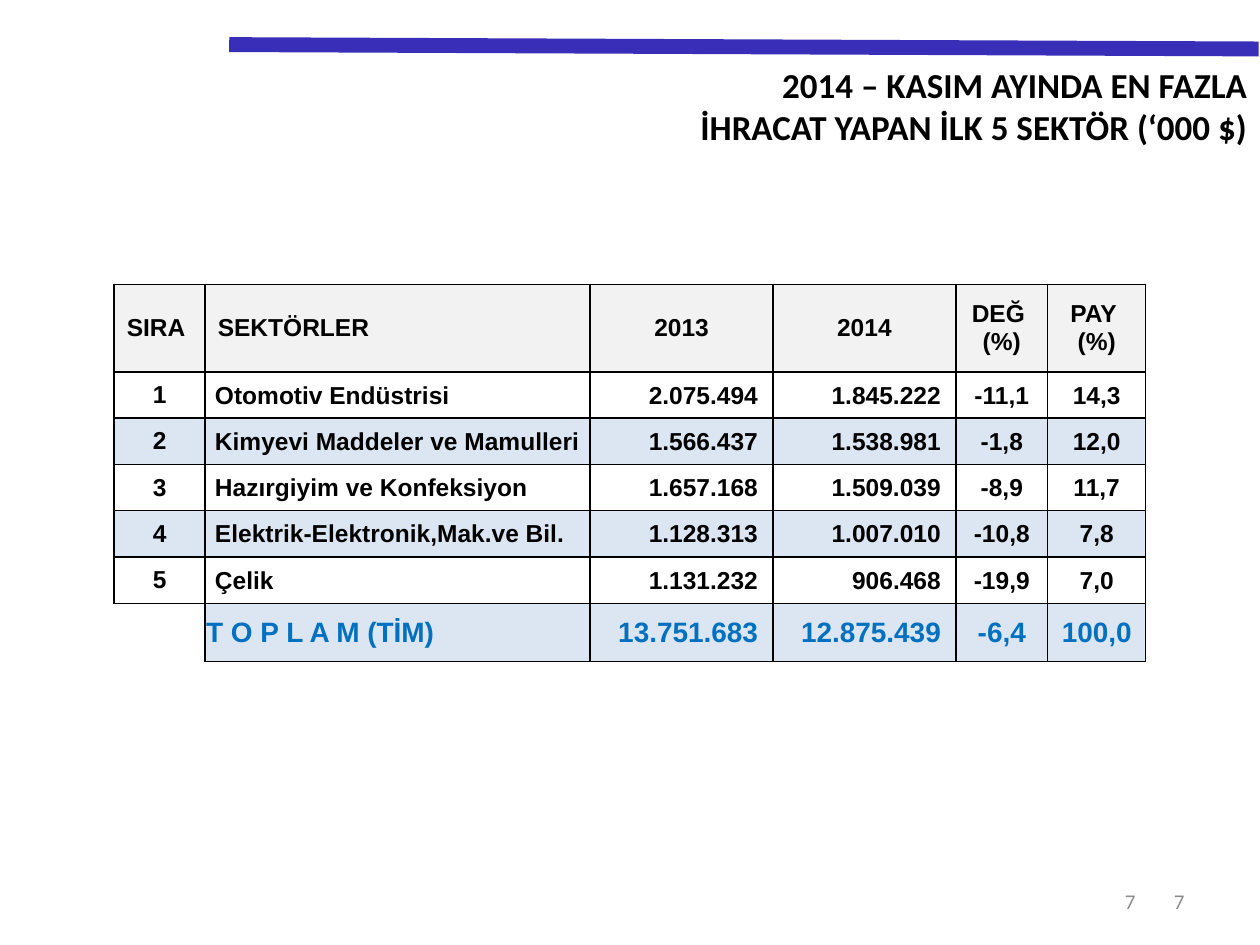
from pptx import Presentation
from pptx.dml.color import RGBColor
from pptx.enum.shapes import MSO_CONNECTOR
from pptx.enum.text import MSO_ANCHOR, MSO_AUTO_SIZE, PP_ALIGN
from pptx.oxml.ns import qn
from pptx.util import Pt
from lxml import etree

BLACK = RGBColor(0x00, 0x00, 0x00)
INDIGO = RGBColor(0x38, 0x2E, 0xB8)
GRAY = RGBColor(0x8C, 0x8C, 0x8C)
HEADER_FILL = RGBColor(0xF2, 0xF2, 0xF2)
BAND_FILL = RGBColor(0xDC, 0xE6, 0xF2)
TOTAL_BLUE = RGBColor(0x00, 0x70, 0xC0)

LEFT, CENTER, RIGHT = PP_ALIGN.LEFT, PP_ALIGN.CENTER, PP_ALIGN.RIGHT
MIDDLE, TOP = MSO_ANCHOR.MIDDLE, MSO_ANCHOR.TOP
STRAIGHT = MSO_CONNECTOR.STRAIGHT
NO_AUTOFIT = MSO_AUTO_SIZE.NONE

TITLE_LINES = ["2014 – KASIM AYINDA EN FAZLA", "İHRACAT YAPAN İLK 5 SEKTÖR (‘000 $)"]
COLUMN_WIDTHS = [52, 220, 104.5, 104.5, 52.5, 56]
ROW_HEIGHTS = [50] + [26.45] * 5 + [33.25]
HEADER_ALIGNMENTS = [LEFT, LEFT, CENTER, CENTER, CENTER, CENTER]
BODY_ALIGNMENTS = [CENTER, LEFT, RIGHT, RIGHT, CENTER, CENTER]
DEFAULT_MARGINS = (7.2, 3.6, 7.2, 3.6)
TIGHT_MARGINS = (0.6, 0.6, 0.6, 0)
NAME_MARGINS = (5.6, 0.6, 0.6, 0)
AMOUNT_MARGINS = (0.6, 0.6, 8.6, 0)
BODY_MARGINS = [DEFAULT_MARGINS, NAME_MARGINS, AMOUNT_MARGINS, AMOUNT_MARGINS,
                TIGHT_MARGINS, TIGHT_MARGINS]
TABLE_ROWS = [
    ["SIRA", "SEKTÖRLER", "2013", "2014", "DEĞ \n(%)", "PAY \n(%)"],
    ["1", "Otomotiv Endüstrisi", "2.075.494", "1.845.222", "-11,1", "14,3"],
    ["2", "Kimyevi Maddeler ve Mamulleri", "1.566.437", "1.538.981", "-1,8", "12,0"],
    ["3", "Hazırgiyim ve Konfeksiyon", "1.657.168", "1.509.039", "-8,9", "11,7"],
    ["4", "Elektrik-Elektronik,Mak.ve Bil.", "1.128.313", "1.007.010", "-10,8", "7,8"],
    ["5", "Çelik", "1.131.232", "906.468", "-19,9", "7,0"],
    ["", "T O P L A M (TİM)", "13.751.683", "12.875.439", "-6,4", "100,0"],
]
TOTAL_ROW = len(TABLE_ROWS) - 1


def write_lines(text_frame, lines, alignment, font_name, size, color, bold=True):
    """Write each line as a paragraph holding one formatted run."""
    for index, line in enumerate(lines):
        paragraph = text_frame.paragraphs[0] if index == 0 else text_frame.add_paragraph()
        paragraph.alignment = alignment
        run = paragraph.add_run()
        run.text = line
        run.font.name = font_name
        run.font.size = Pt(size)
        run.font.bold = bold
        run.font.color.rgb = color


def add_top_rule(slide, left, top, width, drop):
    """Draw the thick, slightly sloping rule above the title."""
    rule = slide.shapes.add_connector(STRAIGHT, Pt(left), Pt(top), Pt(left + width), Pt(top + drop))
    rule.line.color.rgb = INDIGO
    rule.line.width = Pt(8.5)
    etree.SubElement(rule._element.spPr, qn("a:effectLst"))


def place_title(slide, left, top, width, height):
    """Place the two-line title in its placeholder."""
    title = slide.shapes.title
    title.left, title.top, title.width, title.height = Pt(left), Pt(top), Pt(width), Pt(height)
    title.text_frame.auto_size = NO_AUTOFIT
    title.text_frame.vertical_anchor = TOP
    write_lines(title.text_frame, TITLE_LINES, RIGHT, "Calibri", 20, BLACK)


def add_page_number(slide, left, top, width, height):
    """Add a right-aligned page number."""
    text_frame = slide.shapes.add_textbox(Pt(left), Pt(top), Pt(width), Pt(height)).text_frame
    text_frame.word_wrap = True
    text_frame.vertical_anchor = MIDDLE
    write_lines(text_frame, ["7"], RIGHT, "Calibri", 12, GRAY, bold=False)


def set_borders(cell, visible_sides):
    """Draw thin black borders on the given sides and none on the others."""
    properties = cell._tc.get_or_add_tcPr()
    for side in "LRTB":
        border = etree.SubElement(properties, qn(f"a:ln{side}"), w=str(Pt(1)))
        if side in visible_sides:
            fill = etree.SubElement(border, qn("a:solidFill"))
            etree.SubElement(fill, qn("a:srgbClr"), val=str(BLACK))
        else:
            etree.SubElement(border, qn("a:noFill"))


def format_cell(cell, row, column, text):
    """Fill one cell with its borders, background and text."""
    is_header, is_total = row == 0, row == TOTAL_ROW
    set_borders(cell, "LRTB" if text else "RT")
    if text and row % 2 == 0:
        cell.fill.solid()
        cell.fill.fore_color.rgb = HEADER_FILL if is_header else BAND_FILL
    else:
        cell.fill.background()
    margins = DEFAULT_MARGINS if is_header else BODY_MARGINS[column]
    if is_total and column == 1:
        margins = TIGHT_MARGINS
    cell.margin_left, cell.margin_top, cell.margin_right, cell.margin_bottom = map(Pt, margins)
    cell.vertical_anchor = MIDDLE
    if text:
        alignments = HEADER_ALIGNMENTS if is_header else BODY_ALIGNMENTS
        size, color = (16, TOTAL_BLUE) if is_total else (14, BLACK)
        write_lines(cell.text_frame, text.split("\n"), alignments[column], "Arial", size, color)


def add_sector_table(slide, left, top):
    """Add the ranking of export sectors with its total row."""
    table = slide.shapes.add_table(len(ROW_HEIGHTS), len(COLUMN_WIDTHS), Pt(left), Pt(top),
                                   Pt(sum(COLUMN_WIDTHS)), Pt(sum(ROW_HEIGHTS))).table
    table.first_row = table.horz_banding = False
    for column, width in zip(table.columns, COLUMN_WIDTHS):
        column.width = Pt(width)
    for row, height in zip(table.rows, ROW_HEIGHTS):
        row.height = Pt(height)
    for row, texts in enumerate(TABLE_ROWS):
        for column, text in enumerate(texts):
            format_cell(table.cell(row, column), row, column, text)


def main():
    """Build the slide and save the presentation."""
    presentation = Presentation()
    presentation.slide_width, presentation.slide_height = Pt(720), Pt(540)
    slide = presentation.slides.add_slide(presentation.slide_layouts[5])
    add_page_number(slide, 516, 500.5, 168, 28.75)
    add_top_rule(slide, 131, 25.5, 588.25, 2.5)
    add_page_number(slide, 505, 500.5, 151, 28.75)
    place_title(slide, 76, 32.5, 644, 55.5)
    add_sector_table(slide, 65.25, 162.5)
    presentation.save("out.pptx")


if __name__ == "__main__":
    main()
